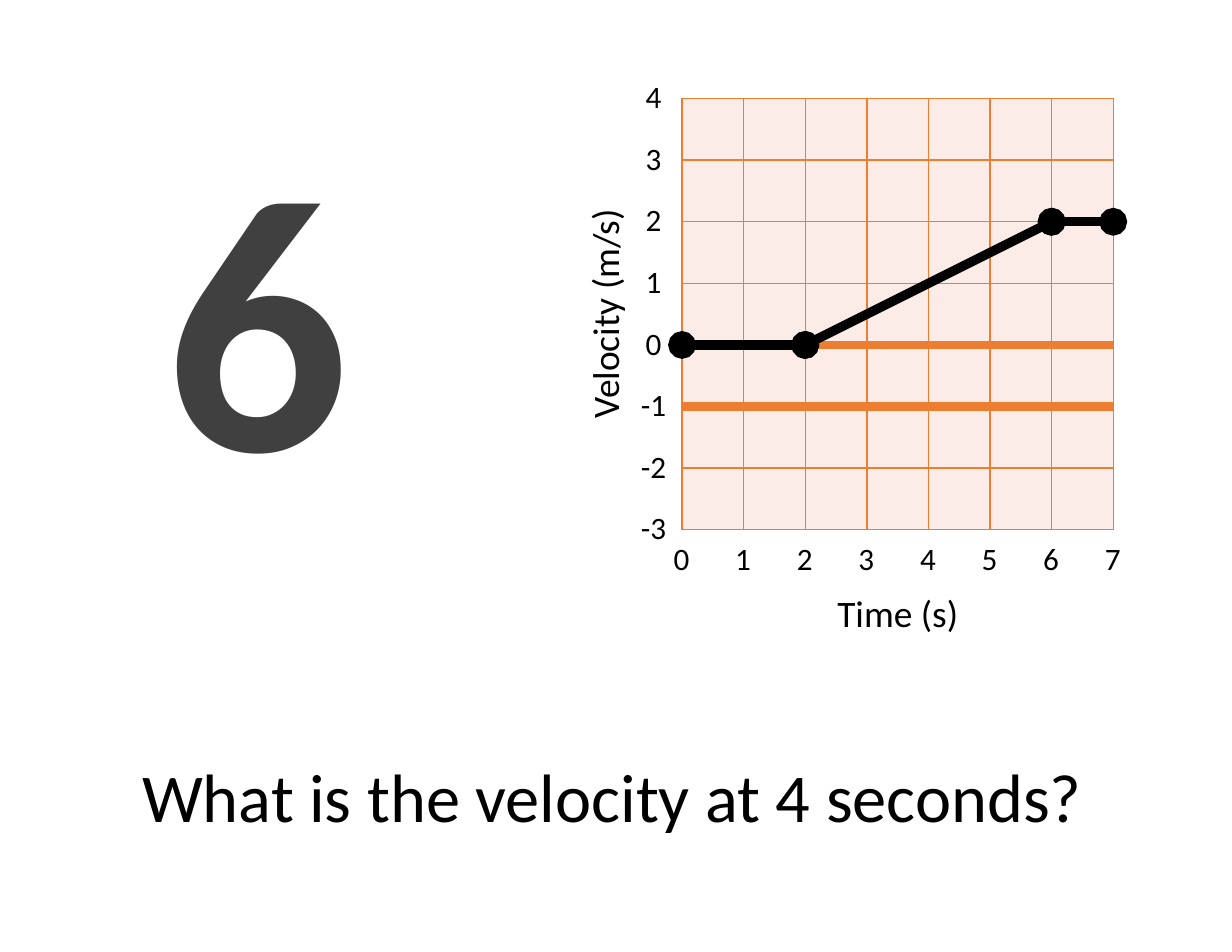
from lxml.etree import SubElement
from pptx import Presentation
from pptx.dml.color import RGBColor
from pptx.enum.shapes import MSO_CONNECTOR as Connector
from pptx.enum.text import MSO_ANCHOR as Anchor, PP_ALIGN as Align
from pptx.oxml.ns import qn
from pptx.util import Inches, Pt

UNIT = 0.55  # side of one grid square
GRID_LEFT, GRID_TOP = 6.09, 0.88
TIMES = range(8)
VELOCITIES = range(4, -4, -1)
POINTS = [(0, 0), (2, 0), (6, 2), (7, 2)]
THICK_LEVELS = (0, -1)


def color(value):
    return RGBColor.from_string(value)


class GraphSlide:
    font = "Calibri"
    ink = "000000"
    digit = "404040"
    grid = "ED7D31"
    paper = "FCECE8"

    def __init__(self, deck):
        self.page = deck.slides.add_slide(deck.slide_layouts[5])

    def format_text(self, frame, size, ink=None, bold=False):
        para = frame.paragraphs[0]
        para.alignment = Align.CENTER
        span = para.runs[0]
        span.font.name = self.font
        span.font.size = Pt(size)
        span.font.bold = bold
        span.font.color.rgb = color(ink or self.ink)
        return para

    def title(self, text, left, top, width, height):
        box = self.page.shapes.title
        box.left, box.top = Inches(left), Inches(top)
        box.width, box.height = Inches(width), Inches(height)
        box.text_frame.text = text
        box.text_frame.vertical_anchor = Anchor.MIDDLE
        self.format_text(box.text_frame, 44)

    def text(self, text, left, top, width, height, size, rotation=0,
             anchor=Anchor.TOP, ink=None, bold=False):
        box = self.page.shapes.add_textbox(
            Inches(left), Inches(top), Inches(width), Inches(height))
        box.rotation = rotation
        frame = box.text_frame
        frame.word_wrap = True
        frame.vertical_anchor = anchor
        frame.text = text
        return self.format_text(frame, size, ink, bold)

    def borders(self, cell, **widths):
        """Set the sides L, R, T and B in points; 0 hides a side."""
        properties = cell._tc.get_or_add_tcPr()
        for side, width in widths.items():
            line = SubElement(properties, qn(f"a:ln{side}"), w=str(Pt(width)))
            if width:
                fill = SubElement(line, qn("a:solidFill"))
                SubElement(fill, qn("a:srgbClr"), val=self.grid)
            else:
                SubElement(line, qn("a:noFill"))

    def table(self, rows, columns, left, top):
        table = self.page.shapes.add_table(
            rows, columns, Inches(left), Inches(top),
            Inches(columns * UNIT), Inches(rows * UNIT)).table
        table.first_row = table.horz_banding = False
        for line in table.columns:
            line.width = Inches(UNIT)
        for line in table.rows:
            line.height = Inches(UNIT)
        return table

    def graph_paper(self):
        size = len(TIMES) - 1
        table = self.table(size, size, GRID_LEFT, GRID_TOP)
        widths = [6 if level in THICK_LEVELS else 1 for level in VELOCITIES]
        for row in range(size):
            for column in range(size):
                cell = table.cell(row, column)
                self.borders(cell, L=1, R=1, T=widths[row], B=widths[row + 1])
                cell.fill.solid()
                cell.fill.fore_color.rgb = color(self.paper)

    def axis_labels(self, values, left, top, vertical=False):
        count = len(values)
        table = self.table(*((count, 1) if vertical else (1, count)), left, top)
        for cell, value in zip(table.iter_cells(), values):
            cell.text_frame.text = str(value)
            cell.vertical_anchor = Anchor.MIDDLE
            self.format_text(cell.text_frame, 20)
            self.borders(cell, L=0, R=0, T=0, B=0)
            cell.fill.background()

    def segment(self, start, end):
        """Join two (time, velocity) points with a line that has round ends."""
        ends = [Inches(length) for time, velocity in (start, end)
                for length in (GRID_LEFT + time * UNIT,
                               GRID_TOP + (VELOCITIES[0] - velocity) * UNIT)]
        line = self.page.shapes.add_connector(Connector.STRAIGHT, *ends)
        line.line.color.rgb = color(self.ink)
        line.line.width = Pt(6)
        outline = line.line._get_or_add_ln()
        for tip in ("a:headEnd", "a:tailEnd"):
            SubElement(outline, qn(tip), type="oval")
        SubElement(line._element.spPr, qn("a:effectLst"))


def main():
    deck = Presentation()
    deck.slide_width, deck.slide_height = Inches(11), Inches(8.5)
    slide = GraphSlide(deck)

    slide.title("What is the velocity at 4 seconds?", 0.44, 6.2, 10.06, 1.79)
    number = slide.text("6", 0.44, 0.88, 3.72, 4.2, 233, anchor=Anchor.MIDDLE,
                        ink=slide.digit, bold=True)
    number.line_spacing = 0.9
    number.runs[0].font._element.set("spc", "-1000")

    slide.graph_paper()
    for start, end in zip(POINTS, POINTS[1:]):
        slide.segment(start, end)

    slide.axis_labels(TIMES, 5.81, 4.72)
    slide.axis_labels(VELOCITIES, 5.56, 0.6, vertical=True)
    slide.text("Time (s)", GRID_LEFT, 5.22, 3.85, 0.5, 24)
    slide.text("Velocity (m/s)", 3.47, 2.55, 3.85, 0.5, 24, rotation=270)

    deck.save("out.pptx")


if __name__ == "__main__":
    main()
